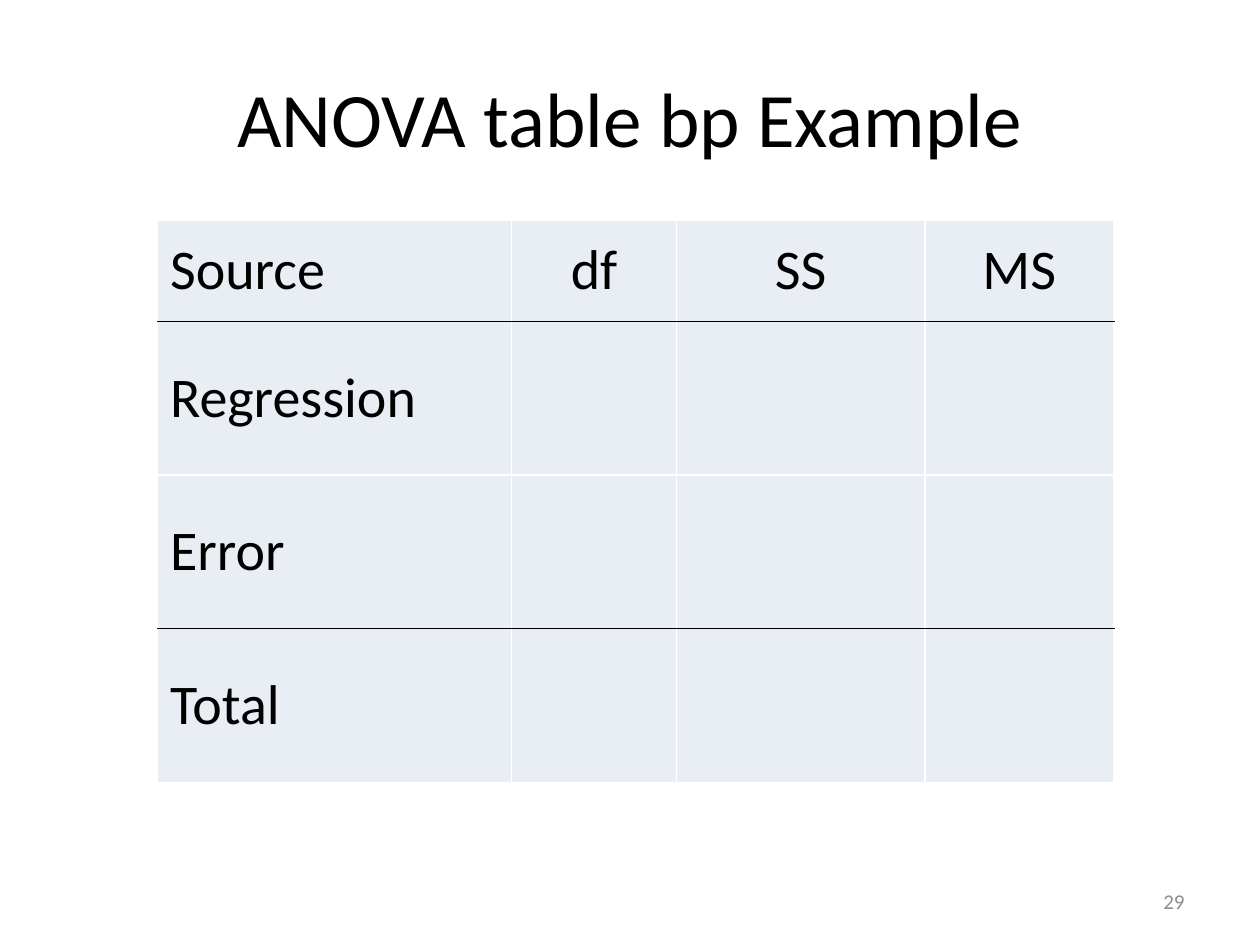
from lxml import etree
from pptx import Presentation
from pptx import util as u
from pptx.dml.color import RGBColor
from pptx.enum import text
from pptx.oxml import ns


def write(frame, wording, size, color="000000", align=text.PP_ALIGN.LEFT):
    frame.word_wrap = True
    frame.vertical_anchor = text.MSO_ANCHOR.MIDDLE
    paragraph = frame.paragraphs[0]
    paragraph.alignment = align
    run = paragraph.add_run()
    run.text = wording
    run.font.name = "Calibri"
    run.font.size = u.Pt(size)
    run.font.color.rgb = RGBColor.from_string(color)


def border(cell, side, color):
    line = etree.SubElement(cell._tc.get_or_add_tcPr(), ns.qn(f"a:ln{side}"), w=str(u.Pt(1)))
    fill = etree.SubElement(line, ns.qn("a:solidFill"))
    etree.SubElement(fill, ns.qn("a:srgbClr"), val=color)


prs = Presentation()
prs.slide_width, prs.slide_height = u.Inches(10), u.Inches(7.5)
W, H = prs.slide_width, prs.slide_height
slide = prs.slides.add_slide(prs.slide_layouts[5])

title = slide.shapes.title
title.left, title.top = int(W * 0.05), int(H * 0.04)
title.width, title.height = int(W * 0.9), u.Inches(1.25)
write(title.text_frame, "ANOVA table bp Example", 44, align=text.PP_ALIGN.CENTER)

headings = ["Source", "df", "SS", "MS"]
sources = ["Regression", "Error", "Total"]
column_widths = [2.81, 1.31, 1.97, 1.5]
row_heights = [0.8] + [1.22] * len(sources)
rule_colors = ["FFFFFF", "000000", "FFFFFF", "000000", "FFFFFF"]

anova = slide.shapes.add_table(
    len(row_heights), len(column_widths), u.Inches(1.25), u.Inches(1.75),
    u.Inches(sum(column_widths)), u.Inches(sum(row_heights))).table
anova.first_row = anova.horz_banding = False
for column, width in zip(anova.columns, column_widths):
    column.width = u.Inches(width)

for r, height in enumerate(row_heights):
    anova.rows[r].height = u.Inches(height)
    labels = headings if r == 0 else [sources[r - 1], "", "", ""]
    for c, label in enumerate(labels):
        cell = anova.cell(r, c)
        cell.vertical_anchor = text.MSO_ANCHOR.MIDDLE
        for side, color in zip("LRTB", ["FFFFFF", "FFFFFF", *rule_colors[r:r + 2]]):
            border(cell, side, color)
        cell.fill.solid()
        cell.fill.fore_color.rgb = RGBColor.from_string("E9EDF4")
        if label:
            write(cell.text_frame, label, 32,
                  align=text.PP_ALIGN.CENTER if c else text.PP_ALIGN.LEFT)

page_number = slide.shapes.add_textbox(u.Inches(7.17), u.Inches(6.95), u.Inches(2.33), u.Inches(0.4))
write(page_number.text_frame, "29", 12, "8C8C8C", text.PP_ALIGN.RIGHT)

prs.save("out.pptx")
